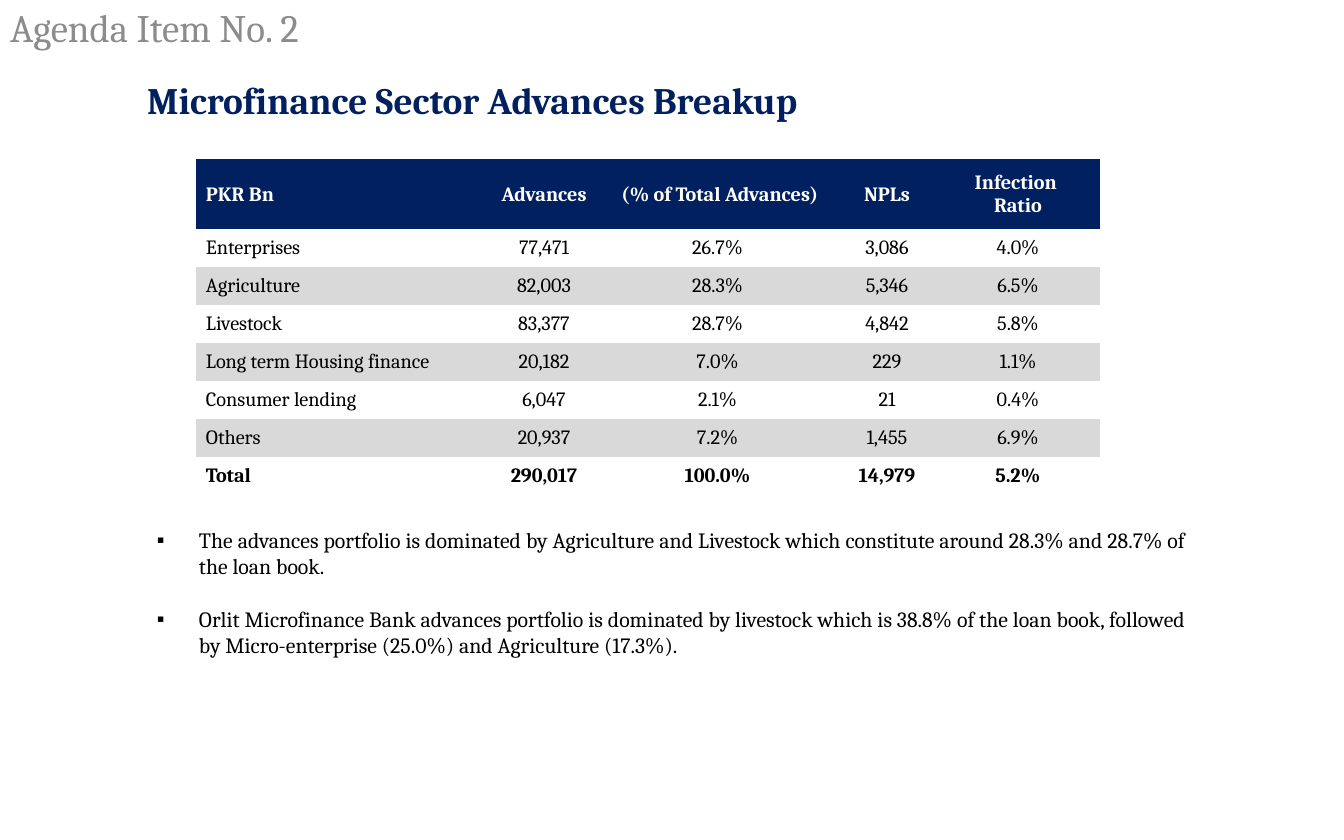
from lxml.etree import SubElement
from pptx import Presentation
from pptx.dml.color import RGBColor
from pptx.enum.text import MSO_ANCHOR, MSO_AUTO_SIZE, PP_ALIGN
from pptx.oxml.ns import qn
from pptx.util import Pt

PX = 914400 / 112
FONT = "Cambria"
HUES = {"navy": "002060", "gray": "8C8C8C", "band": "D9D9D9",
        "white": "FFFFFF", "black": "000000"}
PLAIN = "{2D5ABB26-0587-4C30-8999-92F81FD0307C}"  # table style without grid

ROWS = [
    ("PKR Bn", "Advances", " (% of Total Advances)", "NPLs", "Infection \vRatio"),
    ("Enterprises", "77,471", "26.7%", "3,086", "4.0%"),
    ("Agriculture", "82,003", "28.3%", "5,346", "6.5%"),
    ("Livestock", "83,377", "28.7%", "4,842", "5.8%"),
    ("Long term Housing finance", "20,182", "7.0%", "229", "1.1%"),
    ("Consumer lending", "6,047", "2.1%", "21", "0.4%"),
    ("Others", "20,937", "7.2%", "1,455", "6.9%"),
    ("Total", "290,017", "100.0%", "14,979", "5.2%"),
]
POINTS = [
    "The advances portfolio is dominated by Agriculture and Livestock which "
    "constitute around 28.3% and 28.7% of the loan book.",
    "Orlit Microfinance Bank advances portfolio is dominated by livestock which "
    "is 38.8% of the loan book, followed by Micro-enterprise (25.0%) and "
    "Agriculture (17.3%).",
]


def emu(px):
    return round(px * PX)


def apply(item, **form):
    for key, value in form.items():
        setattr(item, key, value)


class Deck:
    def __init__(self, wide, high):
        self.show = Presentation()
        apply(self.show, slide_width=emu(wide), slide_height=emu(high))
        self.slide = self.show.slides.add_slide(self.show.slide_layouts[1])

    def place(self, shape, *box):
        apply(shape, **dict(zip(("left", "top", "width", "height"), map(emu, box))))

    def style(self, para, size, hue, bold=False, **form):
        apply(para, **form)
        for run in para.runs:
            apply(run.font, name=FONT, size=Pt(size), bold=bold)
            run.font.color.rgb = RGBColor.from_string(HUES[hue])

    def line(self, shape, box, text, size, hue, bold=False, **form):
        self.place(shape, *box)
        frame = shape.text_frame
        frame.text = text
        apply(frame, word_wrap=True, auto_size=MSO_AUTO_SIZE.NONE,
              vertical_anchor=MSO_ANCHOR.MIDDLE)
        self.style(frame.paragraphs[0], size, hue, bold,
                   alignment=PP_ALIGN.LEFT, **form)

    def title(self, box, text, size, hue):
        self.line(self.slide.shapes.title, box, text, size, hue, line_spacing=0.9)

    def label(self, box, text, size, hue):
        shape = self.slide.shapes.add_textbox(0, 0, 0, 0)
        self.line(shape, box, text, size, hue, bold=True)

    def bullets(self, box, items, size, gap):
        body = self.slide.placeholders[1]
        self.place(body, *box)
        frame = body.text_frame
        frame.text = "\n".join(items)
        apply(frame, word_wrap=True, auto_size=MSO_AUTO_SIZE.NONE,
              vertical_anchor=MSO_ANCHOR.TOP, margin_left=emu(8),
              margin_right=emu(8), margin_top=emu(4), margin_bottom=emu(4))
        for i, para in enumerate(frame.paragraphs):
            props = para._p.get_or_add_pPr()
            props.set("marL", str(emu(42)))
            props.set("indent", str(-emu(42)))
            SubElement(props, qn("a:buChar"), char="▪")
            self.style(para, size, "black", alignment=PP_ALIGN.JUSTIFY,
                       space_before=Pt(gap if i else 0))

    def table(self, left, top, cols, highs, rows, size):
        frame = self.slide.shapes.add_table(
            len(rows), len(cols), emu(left), emu(top),
            emu(sum(cols)), emu(sum(highs)))
        grid = frame.table
        grid._tbl.tblPr.find(qn("a:tableStyleId")).text = PLAIN
        apply(grid, first_row=False, horz_banding=False)
        for col, wide in zip(grid.columns, cols):
            col.width = emu(wide)
        for r, (high, row) in enumerate(zip(highs, rows)):
            grid.rows[r].height = emu(high)
            for c, text in enumerate(row):
                self.cell(grid.cell(r, c), text, r, c, len(rows) - 1, size)

    def cell(self, cell, text, r, c, last, size):
        cell.text = text
        apply(cell, vertical_anchor=MSO_ANCHOR.MIDDLE, margin_top=emu(1),
              margin_left=emu(1 if c else 10), margin_right=emu(1), margin_bottom=0)
        # Navy header, then every second row shaded
        fill = "navy" if r == 0 else "band" if r % 2 == 0 else None
        if fill:
            cell.fill.solid()
            cell.fill.fore_color.rgb = RGBColor.from_string(HUES[fill])
        else:
            cell.fill.background()
        self.style(cell.text_frame.paragraphs[0], size,
                   "black" if r else "white", r in (0, last),
                   alignment=PP_ALIGN.CENTER if c else PP_ALIGN.LEFT)


def main():
    deck = Deck(1344, 840)
    # Headings
    deck.title((-1, 1, 360, 57), "Agenda Item No. 2", 25, "gray")
    deck.label((136, 66, 795, 67), "Microfinance Sector Advances Breakup", 24, "navy")
    # Advances by segment
    deck.table(196, 159, (295, 106, 241, 98, 164), [70] + [38] * 7, ROWS, 13)
    # Remarks
    deck.bullets((149, 523, 1045, 140), POINTS, 14, 17)
    deck.show.save("out.pptx")


if __name__ == "__main__":
    main()
